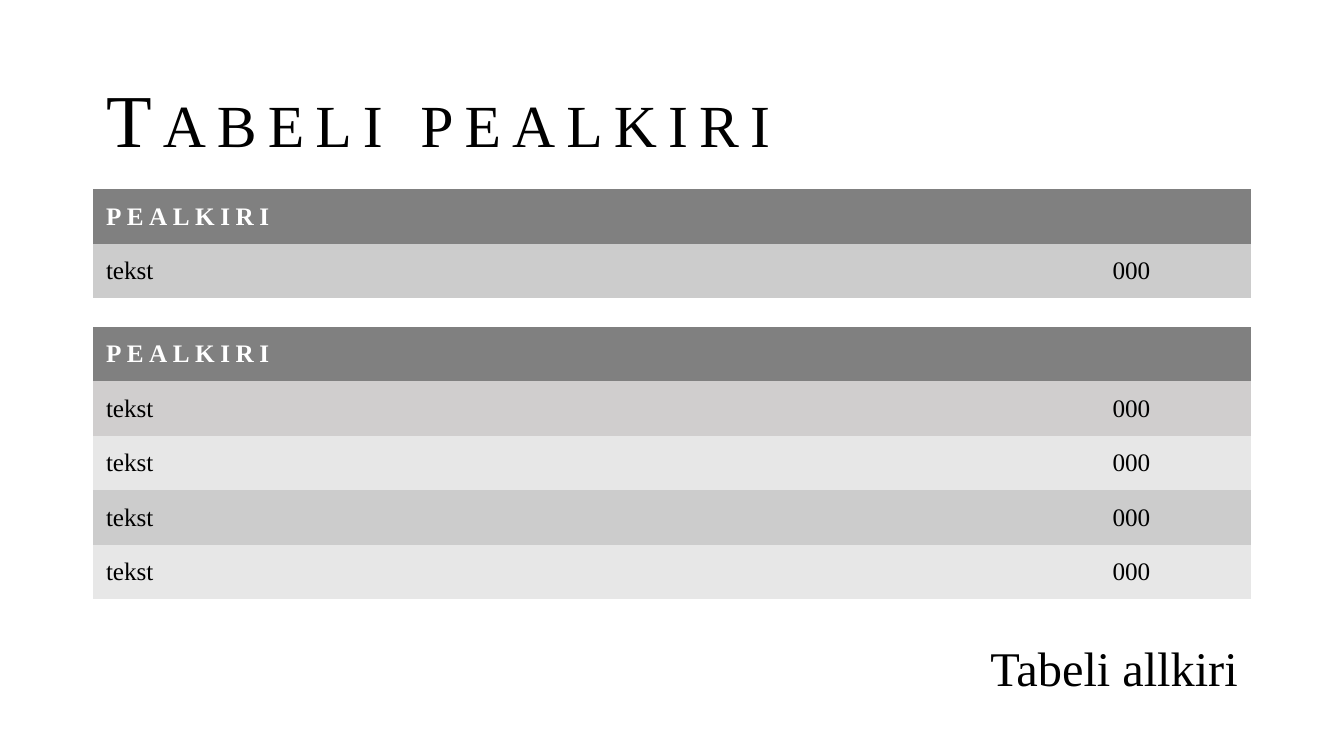
from pptx import Presentation
from pptx.dml.color import RGBColor
from pptx.enum.text import MSO_ANCHOR as Anchor, PP_ALIGN as Align
from pptx.util import Cm, Pt

FONT = "Times New Roman"
BLACK = RGBColor(0, 0, 0)
WHITE = RGBColor(255, 255, 255)
HEAD = RGBColor(0x80, 0x80, 0x80)
WARM = RGBColor(0xD0, 0xCE, 0xCE)
DARK = RGBColor(0xCC, 0xCC, 0xCC)
PALE = RGBColor(0xE7, 0xE7, 0xE7)
PLAIN = "{2D5ABB26-0587-4C30-8999-92F81FD0307C}"

TITLE = "Tabeli pealkiri"
CAPTION = "Tabeli allkiri"
HEADING = "PEALKIRI"
ROW = ("tekst", "000")
TABLES = [
    (3.58, [DARK]),
    (6.18, [WARM, PALE, DARK, PALE]),
]
LEFT, WIDTH = 1.75, 21.9
COLS = (17.36, 4.54)
ROW_H = 1.03


def write(frame, text, size=13.5, color=BLACK, bold=False, align=Align.LEFT,
          line=None, gap=0, small=False):
    par = frame.paragraphs[0]
    par.alignment = align
    par.space_before = Pt(0)
    if line:
        par.line_spacing = line
    run = par.add_run()
    run.text = text
    font = run.font
    font.name, font.size, font.bold = FONT, Pt(size), bold
    font.color.rgb = color
    props = run._r.get_or_add_rPr()
    props.set("spc", str(gap * 100))
    if small:
        props.set("cap", "small")


def add_grid(slide, top, fills):
    count = len(fills) + 1
    shape = slide.shapes.add_table(
        count, len(COLS), Cm(LEFT), Cm(top), Cm(WIDTH), Cm(ROW_H * count))
    table = shape.table
    table.horz_banding = False
    table._tbl.tblPr.find("{*}tableStyleId").text = PLAIN
    for col, width in zip(table.columns, COLS):
        col.width = Cm(width)
    for row, fill in zip(table.rows, [HEAD] + fills):
        row.height = Cm(ROW_H)
        for cell in row.cells:
            cell.fill.solid()
            cell.fill.fore_color.rgb = fill
            cell.vertical_anchor = Anchor.MIDDLE
            cell.margin_top = cell.margin_bottom = 0
    write(table.cell(0, 0).text_frame, HEADING, color=WHITE, bold=True, gap=3)
    for i in range(1, count):
        for j, (text, align) in enumerate(zip(ROW, (Align.LEFT, Align.CENTER))):
            write(table.cell(i, j).text_frame, text, align=align)


deck = Presentation()
deck.slide_width, deck.slide_height = Cm(25.4), Cm(14.29)
slide = deck.slides.add_slide(deck.slide_layouts[5])

title = slide.shapes.title
title.left, title.top = Cm(LEFT), Cm(1.02)
title.width, title.height = Cm(WIDTH), Cm(2.51)
title.text_frame.vertical_anchor = Anchor.MIDDLE
write(title.text_frame, TITLE, size=40, line=Pt(45), gap=6, small=True)

for top, fills in TABLES:
    add_grid(slide, top, fills)

note = slide.shapes.add_textbox(Cm(8.13), Cm(12.24), Cm(15.52), Cm(0.86))
note.text_frame.word_wrap = True
write(note.text_frame, CAPTION, size=25.9, align=Align.RIGHT, line=0.7)

deck.save("out.pptx")
